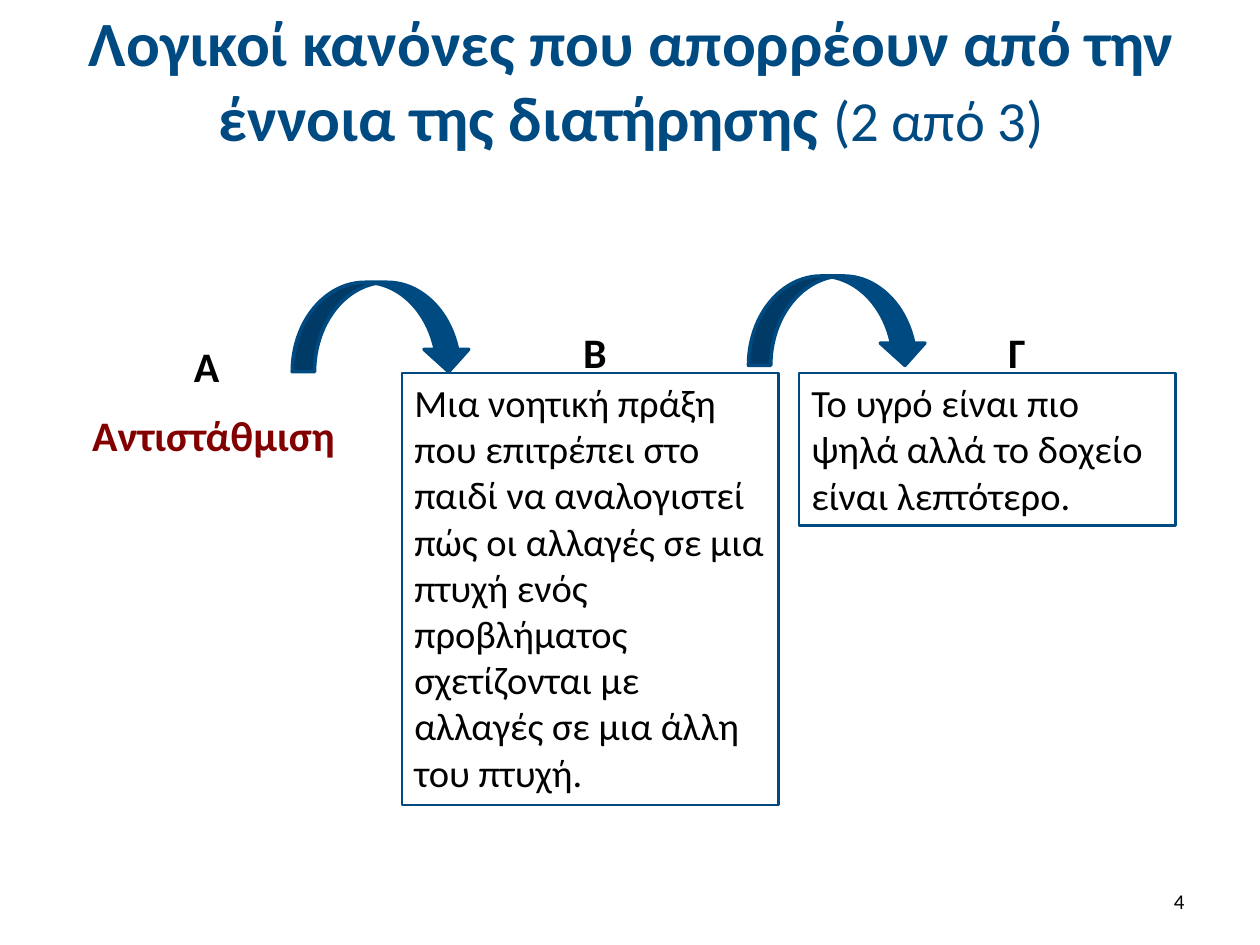
"""Build a slide on the logical rules behind conservation."""
from pptx import Presentation
from pptx.dml.color import RGBColor
from pptx.enum.shapes import MSO_SHAPE
from pptx.enum.text import MSO_ANCHOR, MSO_AUTO_SIZE, PP_ALIGN
from pptx.util import Pt

BLUE = RGBColor(0x00, 0x4A, 0x82)
RED = RGBColor(0x82, 0x00, 0x00)
BLACK = RGBColor(0x00, 0x00, 0x00)


class Deck:
    font = "Calibri"

    def __init__(self, wide, high):
        self.show = Presentation()
        self.show.slide_width, self.show.slide_height = Pt(wide), Pt(high)
        self.slide = self.show.slides.add_slide(self.show.slide_layouts[5])

    def run(self, para, text, size, color=BLACK, bold=False):
        run = para.add_run()
        run.text = text
        font = run.font
        font.name, font.size, font.bold = self.font, Pt(size), bold
        font.color.rgb = color

    def title(self, left, top, wide, high, parts):
        title = self.slide.shapes.title
        title.left, title.top = Pt(left), Pt(top)
        title.width, title.height = Pt(wide), Pt(high)
        frame = title.text_frame
        frame.word_wrap, frame.auto_size = True, MSO_AUTO_SIZE.NONE
        frame.vertical_anchor = MSO_ANCHOR.MIDDLE
        para = frame.paragraphs[0]
        para.alignment = PP_ALIGN.CENTER
        for text, size, bold in parts:
            self.run(para, text, size, BLUE, bold)

    def text(self, left, top, wide, high, text, size, color=BLACK,
             bold=False, align=PP_ALIGN.LEFT, anchor=MSO_ANCHOR.TOP):
        shape = self.slide.shapes.add_textbox(Pt(left), Pt(top), Pt(wide), Pt(high))
        frame = shape.text_frame
        frame.word_wrap, frame.vertical_anchor = True, anchor
        para = frame.paragraphs[0]
        para.alignment = align
        self.run(para, text, size, color, bold)
        return shape

    def label(self, left, top, wide, text, color=BLACK):
        shape = self.text(left, top, wide, 39.6, text, 24, color, True, PP_ALIGN.CENTER)
        shape.text_frame.paragraphs[0].space_before = Pt(12)

    def box(self, left, high, text):
        shape = self.text(left, 213.1, 215.3, high, text, 22)
        shape.text_frame.auto_size = MSO_AUTO_SIZE.SHAPE_TO_FIT_TEXT
        shape.line.color.rgb, shape.line.width = BLUE, Pt(1.5)

    def arrow(self, left, top):
        shape = self.slide.shapes.add_shape(
            MSO_SHAPE.CURVED_DOWN_ARROW, Pt(left), Pt(top), Pt(102.2), Pt(51.1))
        shape.shadow.inherit = False
        shape.fill.solid()
        shape.fill.fore_color.rgb = BLUE
        shape.line.color.rgb, shape.line.width = BLUE, Pt(2)

    def save(self):
        self.show.save("out.pptx")


def main():
    deck = Deck(720, 540)
    deck.title(36.7, 9.4, 648, 71.3, [
        ("Λογικοί κανόνες που απορρέουν από την έννοια της διατήρησης ", 36, True),
        ("(2 από 3)", 32.4, False)])
    for left, top, text in [(93.6, 190.8, "Α"), (315.4, 182.9, "Β"), (556.6, 182.9, "Γ")]:
        deck.label(left, top, 49, text)
    deck.label(36.7, 230.4, 170.6, "Αντιστάθμιση", RED)
    for left, top in [(167, 161.3), (427.7, 157.7)]:
        deck.arrow(left, top)
    deck.box(229.7, 247, "Μια νοητική πράξη που επιτρέπει στο παιδί να αναλογιστεί "
             "πώς οι αλλαγές σε μια πτυχή ενός προβλήματος σχετίζονται με "
             "αλλαγές σε μια άλλη του πτυχή.")
    deck.box(456.5, 87.1, "Το υγρό είναι πιο ψηλά αλλά το δοχείο είναι λεπτότερο.")
    deck.text(516.2, 500.4, 167.8, 28.8, "4", 12,
              align=PP_ALIGN.RIGHT, anchor=MSO_ANCHOR.MIDDLE)
    deck.save()


if __name__ == "__main__":
    main()
